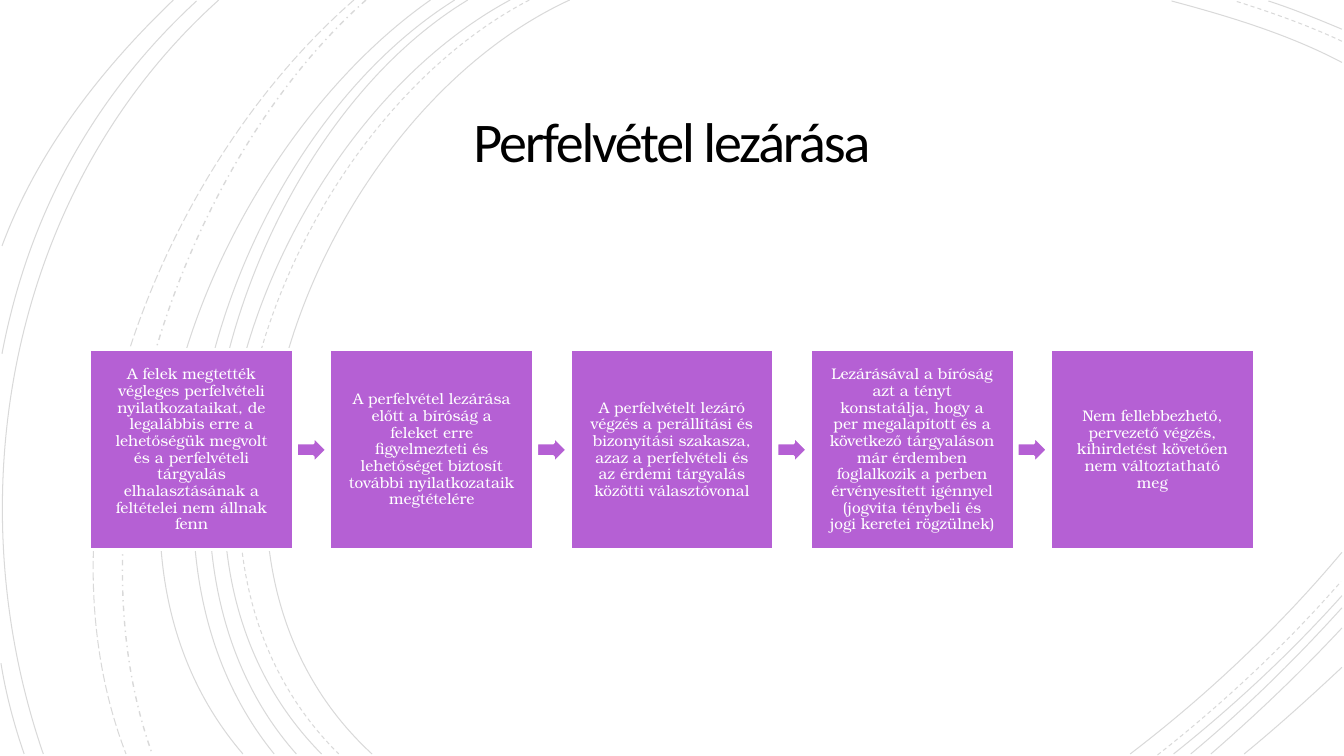
from pptx import Presentation
from pptx import util as u
from pptx.dml.color import RGBColor
from pptx.enum import dml, shapes, text
from pptx.oxml import ns, xmlchemy

COLORS = {"paper": "FFFFFF", "ink": "000000", "step": "B560D4"}
COLUMNS, ROWS = 1333, 750
CELL = u.Inches(0.01)
CURVE_ALPHA = "15000"

deck = Presentation()
deck.slide_width, deck.slide_height = COLUMNS * CELL, ROWS * CELL
page = deck.slides.add_slide(deck.slide_layouts[6])


def paint(shape, fill, line, width):
    shape.shadow.inherit = False
    if fill:
        shape.fill.solid()
        shape.fill.fore_color.rgb = RGBColor.from_string(COLORS[fill])
    else:
        shape.fill.background()
    if line:
        shape.line.color.rgb = RGBColor.from_string(COLORS[line])
        shape.line.width = u.Pt(width)
    else:
        shape.line.fill.background()


def write(shape, words, font, size, color, spacing, inset):
    """Fill a shape with one centred paragraph; inset is in grid cells."""
    frame = shape.text_frame
    frame.word_wrap = True
    frame.vertical_anchor = text.MSO_ANCHOR.MIDDLE
    frame.margin_left = frame.margin_right = inset * CELL
    frame.margin_top = frame.margin_bottom = inset * CELL
    frame.text = words
    para = frame.paragraphs[0]
    para.alignment = text.PP_ALIGN.CENTER
    para.line_spacing = spacing
    span = para.runs[0]
    span.font.name = font
    span.font.size = u.Pt(size)
    span.font.color.rgb = RGBColor.from_string(COLORS[color])
    return span


backdrop = page.shapes.add_shape(
    shapes.MSO_SHAPE.RECTANGLE, 0, 0, deck.slide_width, deck.slide_height)
paint(backdrop, "paper", None, 0)

# Background arcs: start, two control points and end of each, in grid cells
arcs = {
    dml.MSO_LINE.SOLID: [
        [(565, 0), (315, 115), (143, 540), (369, 748)],
        [(506, 0), (270, 127), (110, 537), (319, 748)],
        [(464, 0), (244, 133), (110, 541), (294, 748)],
        [(451, 0), (231, 138), (97, 533), (272, 748)],
        [(427, 0), (217, 147), (53, 529), (241, 748)],
        [(217, 0), (11, 185), (-46, 490), (43, 748)],
        [(195, 1), (92, 96), (28, 214), (2, 351)],
        [(172, 0), (100, 69), (37, 150), (2, 244)],
        [(1, 658), (6, 689), (14, 719), (24, 748)],
        [(1331, 62), (1278, 34), (1218, 16), (1162, 1)],
        [(1331, 29), (1307, 19), (1283, 9), (1258, 1)],
        [(1121, 748), (1197, 690), (1269, 622), (1331, 548)],
        [(1164, 748), (1223, 701), (1280, 648), (1331, 591)],
        [(1181, 748), (1234, 704), (1284, 655), (1331, 603)],
        [(1201, 748), (1246, 709), (1290, 667), (1331, 623)],
        [(1234, 748), (1267, 721), (1299, 692), (1331, 662)],
    ],
    dml.MSO_LINE.DASH: [
        [(525, 0), (285, 125), (123, 537), (336, 748)],
        [(1331, 41), (1297, 25), (1260, 12), (1225, 1)],
        [(1148, 749), (1213, 698), (1275, 640), (1330, 577)],
    ],
    dml.MSO_LINE.DASH_DOT: [[(363, 0), (176, 166), (65, 509), (151, 748)]],
    dml.MSO_LINE.LONG_DASH: [[(351, 0), (157, 169), (29, 499), (125, 748)]],
}
for dash, group in arcs.items():
    for start, *others in group:
        builder = page.shapes.build_freeform(*start, scale=CELL)
        builder.add_line_segments(others, close=False)
        curve = builder.convert_to_shape()
        paint(curve, None, "ink", 1 if dash == dml.MSO_LINE.DASH_DOT else 0.75)
        curve.line.dash_style = dash
        # Join the three straight pieces into one cubic curve
        pieces = list(curve._element.iter(ns.qn("a:lnTo")))
        outline = pieces[0].getparent()
        cubic = xmlchemy.OxmlElement("a:cubicBezTo")
        for piece in pieces:
            cubic.append(piece[0])
            outline.remove(piece)
        outline.append(cubic)
        alpha = xmlchemy.OxmlElement("a:alpha")
        alpha.set("val", CURVE_ALPHA)
        next(curve._element.spPr.iter(ns.qn("a:srgbClr"))).append(alpha)

title = page.shapes.add_textbox(192 * CELL, 87 * CELL, 949 * CELL, 115 * CELL)
heading = write(title, "Perfelvétel lezárása", "Calibri", 40, "ink", 0.85, 25)
heading.font._element.set("spc", "-150")

# Process steps with an arrow in each gap
steps = [
    "A felek megtették végleges perfelvételi nyilatkozataikat, de legalábbis erre a "
    "lehetőségük megvolt és a perfelvételi tárgyalás elhalasztásának a feltételei nem állnak fenn",
    "A perfelvétel lezárása előtt a bíróság a feleket erre figyelmezteti és lehetőséget "
    "biztosít további nyilatkozataik megtételére",
    "A perfelvételt lezáró végzés a perállítási és bizonyítási szakasza, azaz a "
    "perfelvételi és az érdemi tárgyalás közötti választóvonal",
    "Lezárásával a bíróság azt a tényt konstatálja, hogy a per megalapított és a következő "
    "tárgyaláson már érdemben foglalkozik a perben érvényesített igénnyel "
    "(jogvita ténybeli és jogi keretei rögzülnek)",
    "Nem fellebbezhető, pervezető végzés, kihirdetést követően nem változtatható meg",
]
first_left, pitch, box_top, box_width, box_height = 89, 238.25, 347, 202, 198.5
arrow_width, arrow_height = 30, 27
arrow_offset = (box_width + pitch - arrow_width) / 2
arrow_top = box_top + (box_height - arrow_height) / 2

for index, words in enumerate(steps):
    left = first_left + index * pitch
    box = page.shapes.add_shape(
        shapes.MSO_SHAPE.RECTANGLE, u.Emu(int(left * CELL)), box_top * CELL,
        box_width * CELL, u.Emu(int(box_height * CELL)))
    paint(box, "step", "paper", 2)
    write(box, words, "TeX Gyre Bonum", 11, "paper", 0.9, 17)
    if index < len(steps) - 1:
        arrow = page.shapes.add_shape(
            shapes.MSO_SHAPE.RIGHT_ARROW, u.Emu(int((left + arrow_offset) * CELL)),
            u.Emu(int(arrow_top * CELL)), arrow_width * CELL, arrow_height * CELL)
        paint(arrow, "step", "paper", 2)

deck.save("out.pptx")
